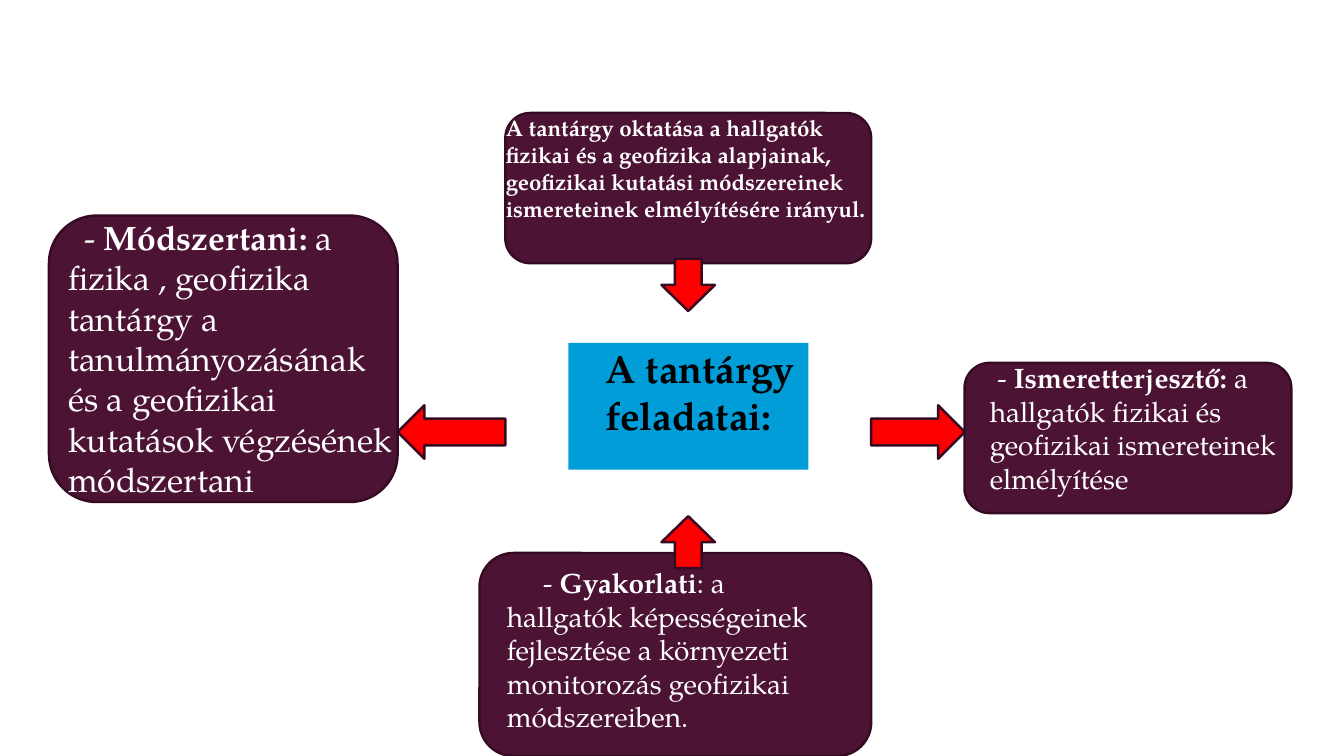
import pptx
import pptx.util
import pptx.dml.color
import pptx.enum.shapes
import pptx.enum.text

Pt = pptx.util.Pt
SHAPE = pptx.enum.shapes.MSO_SHAPE
FONT = "TeX Gyre Pagella"
PLUM, OUTLINE, RED, BLUE = "4D1334", "360A22", "FF0000", "009DD9"
WHITE, BLACK = "FFFFFF", "000000"


def paint(target, colour):
    if hasattr(target, "solid"):
        target.solid()
        target = target.fore_color
    target.rgb = pptx.dml.color.RGBColor.from_string(colour)


def write(box, spans, size, colour, left=0, first=0, before=0):
    frame = box.text_frame
    frame_format = {"word_wrap": True, "margin_left": 0, "margin_right": 0,
                    "margin_top": Pt(0.9), "margin_bottom": 0,
                    "vertical_anchor": pptx.enum.text.MSO_ANCHOR.TOP}
    for name, value in frame_format.items():
        setattr(frame, name, value)
    para = frame.paragraphs[0]
    para.alignment = pptx.enum.text.PP_ALIGN.LEFT
    para.space_before = Pt(before)
    margins = para._p.get_or_add_pPr()
    margins.set("marL", str(Pt(left)))
    margins.set("indent", str(Pt(first)))
    for text, bold in spans:
        span = para.add_run()
        span.text = text
        for name, value in {"name": FONT, "size": Pt(size), "bold": bold}.items():
            setattr(span.font, name, value)
        paint(span.font.color, colour)


deck = pptx.Presentation()
deck.slide_width, deck.slide_height = Pt(960), Pt(540)
page = deck.slides.add_slide(deck.slide_layouts[6])

# Central topic
topic = page.shapes.add_shape(SHAPE.RECTANGLE, Pt(406), Pt(245), Pt(171.5), Pt(90.5))
topic.shadow.inherit = False
paint(topic.fill, BLUE)
topic.line.fill.background()
write(topic, [("A tantárgy feladatai:", True)], 28, BLACK, left=26.5, before=1)

# Panels: panel place, text place, size, left margin, first line, space before, spans
panels = [
    ((361, 80.7, 261.3, 107.3), (361.3, 80.7, 260.8, 116), 16, 0, 0, 0,
     [("A tantárgy oktatása a hallgatók fizikai és a geofizika alapjainak, "
       "geofizikai kutatási módszereinek ismereteinek elmélyítésére irányul.", True)]),
    ((689, 259.2, 233.4, 107.3), (702, 256.5, 220.5, 121), 20, 5, 5.5, 1,
     [("- ", False), ("Ismeretterjesztő:", True),
      (" a hallgatók fizikai és geofizikai ismereteinek elmélyítése", False)]),
    ((35, 154, 249, 204.6), (48, 154, 236.2, 204.6), 24, 0.7, 11.5, 1,
     [("- ", False), ("Módszertani:", True),
      (" a fizika , geofizika tantárgy a tanulmányozásának és a geofizikai "
       "kutatások végzésének módszertani", False)]),
    ((342.5, 395, 279.8, 145), (361.3, 403, 242, 137), 20, 0.7, 26, 1,
     [("- ", False), ("Gyakorlati", True),
      (": a hallgatók képességeinek fejlesztése a környezeti monitorozás "
       "geofizikai módszereiben.", False)]),
]
# Arrows between the topic and the panels
arrows = [
    (SHAPE.RIGHT_ARROW, (622.2, 289.5, 67, 38.2)),
    (SHAPE.LEFT_ARROW, (284, 289.5, 77, 38.2)),
    (SHAPE.DOWN_ARROW, (472.5, 185, 38.2, 37.2)),
    (SHAPE.UP_ARROW, (472.5, 368.7, 38.2, 37.2)),
]
outlined = [(SHAPE.ROUNDED_RECTANGLE, panel[0], PLUM) for panel in panels]
outlined += [(kind, place, RED) for kind, place in arrows]
for kind, place, colour in outlined:
    shape = page.shapes.add_shape(kind, *map(Pt, place))
    shape.shadow.inherit = False
    paint(shape.fill, colour)
    paint(shape.line.fill, OUTLINE)
    shape.line.width = Pt(1.75)

# Panel texts
for _, place, size, left, first, before, spans in panels:
    box = page.shapes.add_textbox(*map(Pt, place))
    write(box, spans, size, WHITE, left, first, before)

deck.save("out.pptx")
